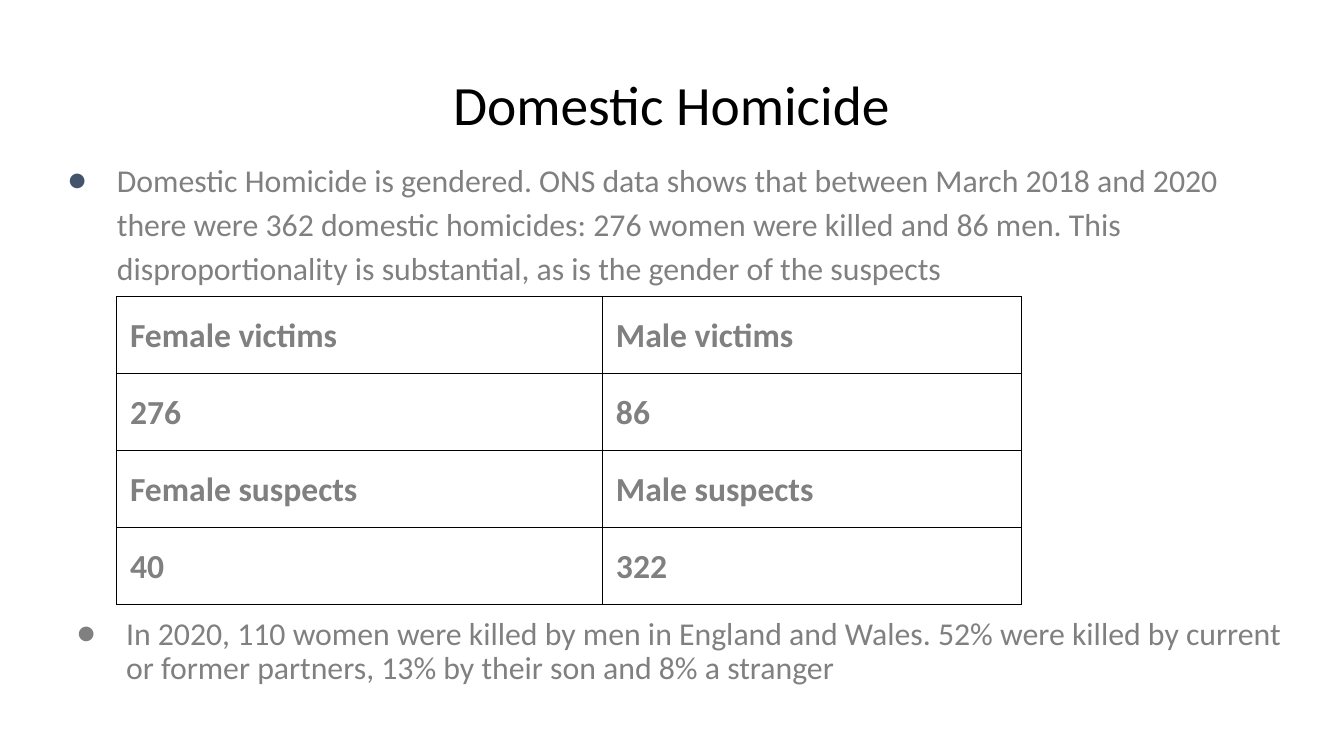
"""Build the Domestic Homicide slide with two bullets and a table of figures."""
from lxml import etree
from pptx import Presentation
from pptx.dml.color import RGBColor
from pptx.enum import text
from pptx.oxml import ns
from pptx.util import Inches, Pt

GREY = "808080"
BLACK = "000000"
INSET = Inches(0.13)


def write(frame, words, size, color, spacing, bold=False):
    """Fill a text frame with one formatted run and return its paragraph."""
    frame.word_wrap = True
    para = frame.paragraphs[0]
    para.line_spacing = spacing
    span = para.add_run()
    span.text = words
    span.font.name = "Calibri"
    span.font.size = Pt(size)
    span.font.bold = bold
    span.font.color.rgb = RGBColor.from_string(color)
    return para


def add_child(parent, tag, **attributes):
    """Append a drawing element with the given attributes."""
    return etree.SubElement(parent, ns.qn(tag), attributes)


deck = Presentation()
deck.slide_width = Inches(13.33)
deck.slide_height = Inches(7.5)
page = deck.slides.add_slide(deck.slide_layouts[5])

title = page.shapes.title
title.left, title.top = Inches(0.45), Inches(0.65)
title.width, title.height = Inches(12.42), Inches(0.84)
heading = title.text_frame
heading.auto_size = text.MSO_AUTO_SIZE.NONE
heading.vertical_anchor = text.MSO_ANCHOR.MIDDLE
heading.margin_left = heading.margin_right = INSET
heading.margin_top = heading.margin_bottom = INSET
write(heading, "Domestic Homicide", 39.6, BLACK, 0.9).alignment = text.PP_ALIGN.CENTER

bullets = [
    (0.36, 1.41, 2.04, 1.15, "44546A",
     "Domestic Homicide is gendered. ONS data shows that between March 2018 and 2020 "
     "there were 362 domestic homicides: 276 women were killed and 86 men. This "
     "disproportionality is substantial, as is the gender of the suspects"),
    (0.45, 6, 1.39, 0.9, GREY,
     "In 2020, 110 women were killed by men in England and Wales. 52% were killed by "
     "current or former partners, 13% by their son and 8% a stranger"),
]
for left, top, height, spacing, bullet_color, words in bullets:
    box = page.shapes.add_textbox(Inches(left), Inches(top), Inches(12.42), Inches(height))
    frame = box.text_frame
    frame.margin_left = frame.margin_right = INSET
    frame.margin_top = frame.margin_bottom = INSET
    para = write(frame, words, 22.7, GREY, spacing)
    para.space_before = Pt(5.3)
    properties = para._p.get_or_add_pPr()
    properties.set("marL", str(Inches(0.67)))
    properties.set("indent", str(Inches(-0.49)))
    add_child(add_child(properties, "a:buClr"), "a:srgbClr", val=bullet_color)
    add_child(properties, "a:buFont", typeface="Calibri")
    add_child(properties, "a:buChar", char="●")

figures = [
    ("Female victims", "Male victims"),
    ("276", "86"),
    ("Female suspects", "Male suspects"),
    ("40", "322"),
]
table = page.shapes.add_table(
    4, 2, Inches(1.16), Inches(2.94), Inches(8.97), Inches(3.06)).table
table.first_row = table.horz_banding = False
for column, width in zip(table.columns, (4.82, 4.15)):
    column.width = Inches(width)
for row, values in zip(table.rows, figures):
    row.height = Inches(3.06 / 4)
    for cell, value in zip(row.cells, values):
        cell.margin_left = cell.margin_right = INSET
        cell.margin_top = cell.margin_bottom = INSET
        write(cell.text_frame, value, 24, GREY, 1.15, bold=True)
        borders = cell._tc.get_or_add_tcPr()
        for side in ("a:lnL", "a:lnR", "a:lnT", "a:lnB"):
            line = add_child(borders, side, w=str(Pt(0.75)))
            add_child(add_child(line, "a:solidFill"), "a:srgbClr", val=BLACK)
        cell.fill.background()

deck.save("out.pptx")
